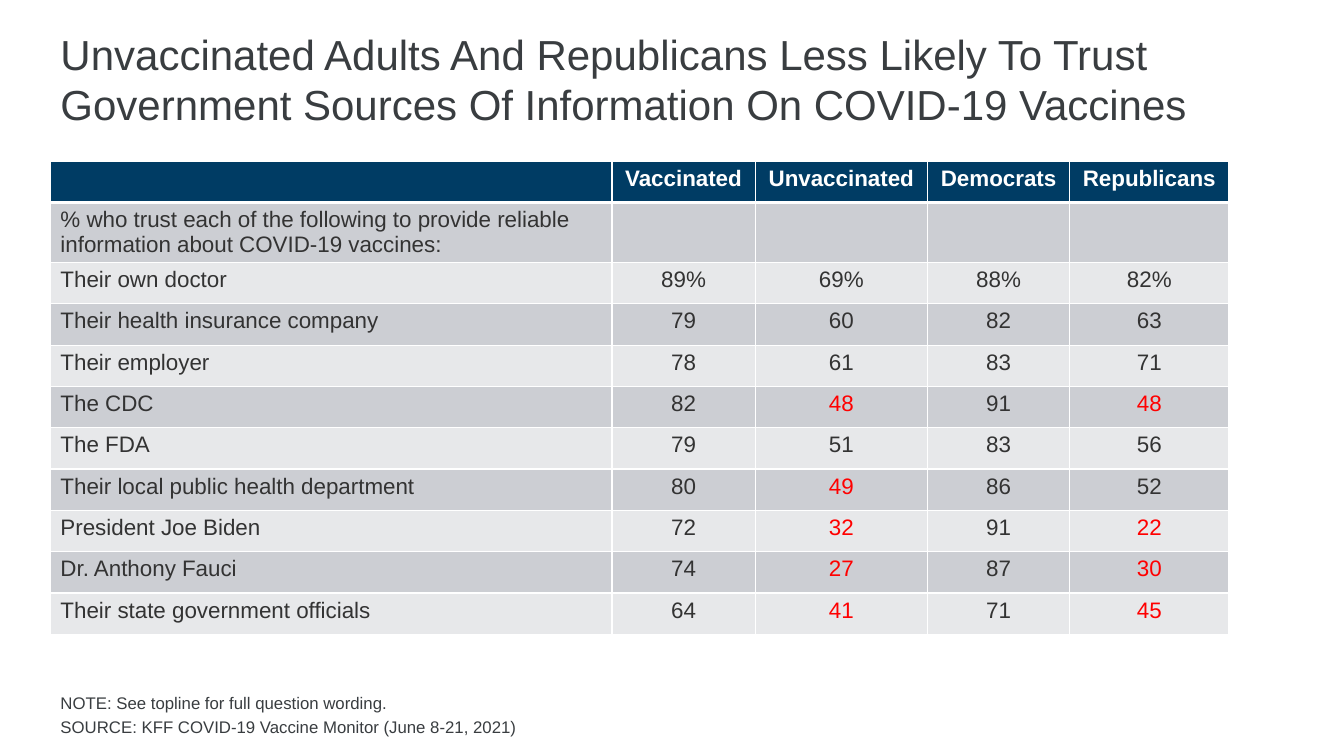
from lxml.etree import SubElement
from pptx import Presentation
from pptx.dml.color import RGBColor
from pptx.enum.text import MSO_ANCHOR as Anchor, MSO_AUTO_SIZE as AutoSize, PP_ALIGN as Align
from pptx.oxml.ns import qn
from pptx.util import Inches, Pt


def style(paragraph, size, color, bold=False):
    font = paragraph.font
    font.name, font.size, font.bold = "Arial", Pt(size), bold
    font.color.rgb = RGBColor.from_string(color)


def add_border(cell, side, width):
    line = SubElement(cell._tc.get_or_add_tcPr(), qn(f"a:ln{side}"), w=str(Pt(width)))
    SubElement(SubElement(line, qn("a:solidFill")), qn("a:srgbClr"), val="FFFFFF")


NAVY, DARK_BAND, LIGHT_BAND = "003C64", "CCCED3", "E7E8EA"
HEADING, BODY, MINORITY = "393D40", "333333", "FF0000"
LEFT = Inches(0.5)
ROW_HEIGHT = Inches(0.41)
COLUMN_WIDTHS = [5.57, 1.42, 1.71, 1.41, 1.58]

trust_rows = [
    ["", "Vaccinated", "Unvaccinated", "Democrats", "Republicans"],
    ["% who trust each of the following to provide reliable information about COVID-19 vaccines:", "", "", "", ""],
    ["Their own doctor", "89%", "69%", "88%", "82%"],
    ["Their health insurance company", "79", "60", "82", "63"],
    ["Their employer", "78", "61", "83", "71"],
    ["The CDC", "82", "48", "91", "48"],
    ["The FDA", "79", "51", "83", "56"],
    ["Their local public health department", "80", "49", "86", "52"],
    ["President Joe Biden", "72", "32", "91", "22"],
    ["Dr. Anthony Fauci", "74", "27", "87", "30"],
    ["Their state government officials", "64", "41", "71", "45"],
]

deck = Presentation()
deck.slide_width, deck.slide_height = Inches(13.33), Inches(7.5)
slide = deck.slides.add_slide(deck.slide_layouts[1])

headline, notes = slide.placeholders
headline.left, headline.top = LEFT, Inches(0.23)
headline.width, headline.height = Inches(12.14), Inches(0.92)
notes.left, notes.top = LEFT, Inches(6.82)
notes.width, notes.height = Inches(10.59), Inches(0.75)
for holder in (headline, notes):
    holder.text_frame.auto_size = AutoSize.NONE
    holder.text_frame.vertical_anchor = Anchor.TOP
    holder.text_frame.word_wrap = True

headline.text_frame.text = (
    "Unvaccinated Adults And Republicans Less Likely To Trust "
    "Government Sources Of Information On COVID-19 Vaccines"
)
headline_line = headline.text_frame.paragraphs[0]
headline_line.alignment = Align.LEFT
style(headline_line, 30, HEADING)

notes.text_frame.text = (
    "NOTE: See topline for full question wording.\n"
    "SOURCE: KFF COVID-19 Vaccine Monitor (June 8-21, 2021)"
)
for index, note in enumerate(notes.text_frame.paragraphs):
    note_format = note._p.get_or_add_pPr()
    note_format.set("marL", "0")
    note_format.set("indent", "0")
    SubElement(note_format, qn("a:buNone"))
    note.space_before = Pt(3 if index else 0)
    style(note, 12, HEADING)

trust = slide.shapes.add_table(
    len(trust_rows), len(COLUMN_WIDTHS), LEFT, Inches(1.6),
    Inches(sum(COLUMN_WIDTHS)), ROW_HEIGHT * len(trust_rows),
).table
for column, width in zip(trust.columns, COLUMN_WIDTHS):
    column.width = Inches(width)

for r, answers in enumerate(trust_rows):
    trust.rows[r].height = ROW_HEIGHT
    is_header = r == 0
    band = NAVY if is_header else DARK_BAND if r % 2 else LIGHT_BAND
    for c, answer in enumerate(answers):
        cell = trust.cell(r, c)
        for side in "LRTB":
            under_header = (r, side) in ((0, "B"), (1, "T"))
            add_border(cell, side, 3 if under_header else 1)
        cell.fill.solid()
        cell.fill.fore_color.rgb = RGBColor.from_string(band)
        cell.text = answer
        entry = cell.text_frame.paragraphs[0]
        entry.alignment = Align.CENTER if c else Align.LEFT
        below_half = answer.isdigit() and int(answer) < 50
        color = "FFFFFF" if is_header else MINORITY if below_half else BODY
        style(entry, 16, color, is_header)

deck.save("out.pptx")
